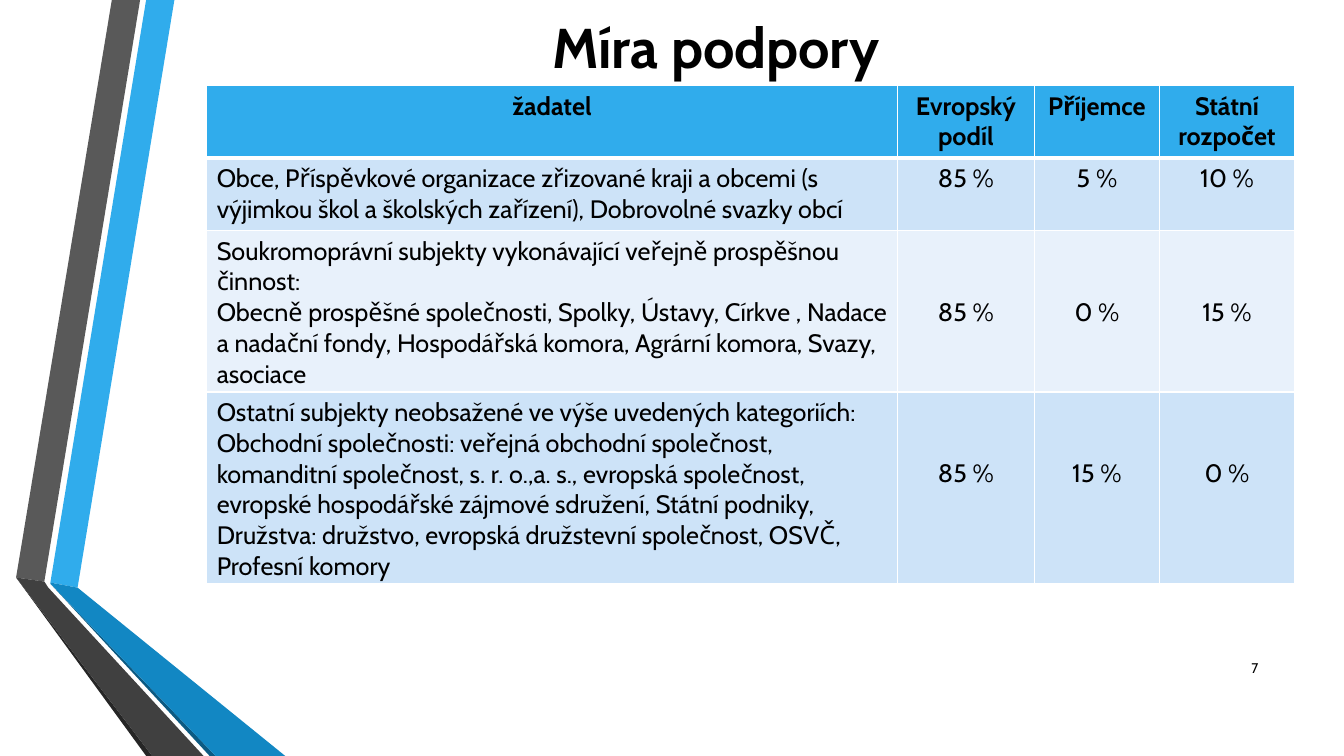
from lxml import etree
from pptx import Presentation
from pptx import util as u
from pptx.dml.color import RGBColor
from pptx.enum import text
from pptx.oxml import ns

BLACK = RGBColor(0, 0, 0)
WHITE = RGBColor(0xFF, 0xFF, 0xFF)
BLUE = RGBColor(0x30, 0xAC, 0xEC)
MID_BLUE = RGBColor(0x12, 0x87, 0xC3)
DARK_BLUE = RGBColor(0x0C, 0x5A, 0x82)
GRAY = RGBColor(0x59, 0x59, 0x59)
DARK_GRAY = RGBColor(0x40, 0x40, 0x40)
CHARCOAL = RGBColor(0x26, 0x26, 0x26)
BANDS = [RGBColor(0xCD, 0xE3, 0xF8), RGBColor(0xE8, 0xF1, 0xFB)]

LEFT, CENTER, RIGHT = (text.PP_ALIGN.LEFT, text.PP_ALIGN.CENTER,
                       text.PP_ALIGN.RIGHT)

RIBBONS = [
    (BLUE, [(0.5, 5.78), (0.77, 5.83), (1.73, 0), (1.45, 0)]),
    (GRAY, [(1.39, 0), (1.11, 0), (0.16, 5.73), (0.44, 5.77)]),
    (CHARCOAL, [(0.16, 5.73), (1.45, 7.5), (1.51, 7.5)]),
    (DARK_BLUE, [(0.5, 5.79), (2.08, 7.5), (2.14, 7.5)]),
    (MID_BLUE, [(0.5, 5.78), (0.5, 5.79), (2.14, 7.5), (2.83, 7.5),
                (0.77, 5.83)]),
    (DARK_GRAY, [(2.02, 7.5), (0.48, 5.83), (0.44, 5.77), (0.16, 5.73),
                 (1.51, 7.5)]),
]

COLUMN_WIDTHS = [6.85, 1.36, 1.24, 1.34]
ROW_HEIGHTS = [0.72, 0.72, 1.59, 1.89]
SHARE_TOPS = [0.05, 0.05, 0.66, 0.66]
SUPPORT_RATES = [
    (["žadatel"], "Evropský podíl", "Příjemce", "Státní rozpočet"),
    (["Obce, Příspěvkové organizace zřizované kraji a obcemi (s výjimkou "
      "škol a školských zařízení), Dobrovolné svazky obcí"],
     "85 %", "5 %", "10 %"),
    (["Soukromoprávní subjekty vykonávající veřejně prospěšnou činnost:",
      "Obecně prospěšné společnosti, Spolky, Ústavy, Církve , Nadace a "
      "nadační fondy, Hospodářská komora, Agrární komora, Svazy, asociace"],
     "85 %", "0 %", "15 %"),
    (["Ostatní subjekty neobsažené ve výše uvedených kategoriích:",
      "Obchodní společnosti: veřejná obchodní společnost, komanditní "
      "společnost, s. r. o.,a. s., evropská společnost, evropské "
      "hospodářské zájmové sdružení, Státní podniky, Družstva: družstvo, "
      "evropská družstevní společnost, OSVČ, Profesní komory"],
     "85 %", "15 %", "0 %"),
]


class SlideBuilder:
    font = "Cabin"

    def __init__(self, slide):
        self.slide = slide

    def add_text(self, frame, lines, size, align, bold=False):
        frame.word_wrap = True
        for index, line in enumerate(lines):
            paragraph = frame.add_paragraph() if index else frame.paragraphs[0]
            paragraph.alignment = align
            run = paragraph.add_run()
            run.text = line
            run.font.name = self.font
            run.font.size = u.Pt(size)
            run.font.bold = bold
            run.font.color.rgb = BLACK

    def textbox(self, box, line, size, align, bold=False):
        shape = self.slide.shapes.add_textbox(*map(u.Inches, box))
        shape.text_frame.vertical_anchor = text.MSO_ANCHOR.MIDDLE
        self.add_text(shape.text_frame, [line], size, align, bold)

    def polygon(self, color, points):
        start, *rest = [(u.Inches(x), u.Inches(y)) for x, y in points]
        builder = self.slide.shapes.build_freeform(*start)
        builder.add_line_segments(rest, close=True)
        shape = builder.convert_to_shape()
        shape.shadow.inherit = False
        shape.fill.solid()
        shape.fill.fore_color.rgb = color
        shape.line.fill.background()

    def borders(self, cell, widths):
        properties = cell._tc.get_or_add_tcPr()
        for side, width in zip("LRTB", widths):
            line = etree.SubElement(properties, ns.qn(f"a:ln{side}"),
                                    w=str(u.Pt(width)))
            fill = etree.SubElement(line, ns.qn("a:solidFill"))
            etree.SubElement(fill, ns.qn("a:srgbClr"), val=str(WHITE))

    def table(self, left, top, widths, heights, rows, share_tops):
        box = (left, top, sum(widths), sum(heights))
        table = self.slide.shapes.add_table(
            len(rows), len(widths), *map(u.Inches, box)).table
        for column, width in zip(table.columns, widths):
            column.width = u.Inches(width)
        for r, (applicants, *shares) in enumerate(rows):
            table.rows[r].height = u.Inches(heights[r])
            header = r == 0
            for c, lines in enumerate([applicants] + [[s] for s in shares]):
                cell = table.cell(r, c)
                self.borders(cell, (1, 1, 3 if r == 1 else 1,
                                    3 if header else 1))
                cell.fill.solid()
                cell.fill.fore_color.rgb = BLUE if header else BANDS[(r - 1) % 2]
                if c:
                    cell.margin_top = u.Inches(share_tops[r])
                align = CENTER if header or c else LEFT
                self.add_text(cell.text_frame, lines, 18, align, header)


def main():
    presentation = Presentation()
    presentation.slide_width = u.Inches(13.33)
    presentation.slide_height = u.Inches(7.5)
    slide = presentation.slides.add_slide(presentation.slide_layouts[6])
    builder = SlideBuilder(slide)
    for color, points in RIBBONS:
        builder.polygon(color, points)
    builder.textbox((1.62, 0, 10.96, 0.91), "Míra podpory", 40, CENTER, True)
    builder.table(2.05, 0.85, COLUMN_WIDTHS, ROW_HEIGHTS, SUPPORT_RATES,
                  SHARE_TOPS)
    builder.textbox((11.98, 6.43, 0.6, 0.4), "7", 10, RIGHT)
    presentation.save("out.pptx")


if __name__ == "__main__":
    main()
